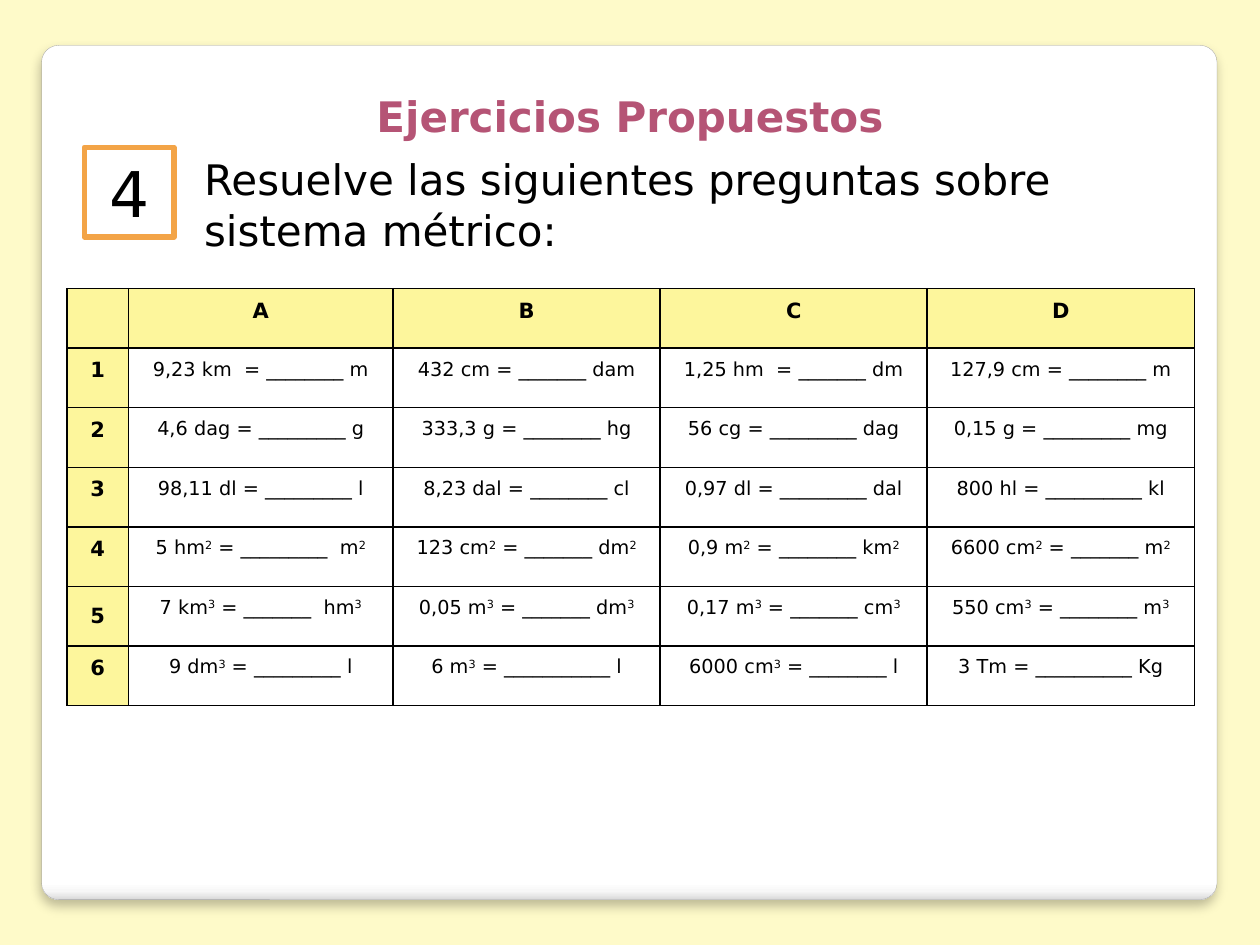
from dataclasses import dataclass

from lxml.etree import SubElement as Sub
from pptx import Presentation
from pptx.dml.color import RGBColor as Rgb
from pptx.enum.shapes import MSO_SHAPE as Shape
from pptx.enum.text import MSO_ANCHOR as Anchor, MSO_AUTO_SIZE as Fit, PP_ALIGN as Align
from pptx.oxml.ns import qn
from pptx.util import Inches, Pt


@dataclass(frozen=True)
class Theme:
    font: str = "DejaVu Sans"
    page: str = "FEFAC9"
    white: str = "FFFFFF"
    edge: str = "A4A4A4"
    title: str = "B55475"
    ink: str = "000000"
    badge: str = "F3A447"
    head: str = "FDF69C"
    big: int = 36
    lead: int = 24
    label: int = 12
    cell: int = 11


T = Theme()
STOPS = ((0, "FFFFFF"), (98, "FFFFFF"), (99, "F7F7F7"), (100, "DADADA"))

# A caret raises the digit that follows it
TASKS = (
    ("9,23 km  = ________ m", "432 cm = _______ dam",
     "1,25 hm  = _______ dm", "127,9 cm = ________ m"),
    ("4,6 dag = _________ g", "333,3 g = ________ hg",
     "56 cg = _________ dag", "0,15 g = _________ mg"),
    ("98,11 dl = _________ l", "8,23 dal = ________ cl",
     "0,97 dl = _________ dal", "800 hl = __________ kl"),
    ("5 hm^2 = _________  m^2", "123 cm^2 = _______ dm^2",
     "0,9 m^2 = ________ km^2", "6600 cm^2 = _______ m^2"),
    ("7 km^3 = _______  hm^3", "0,05 m^3 = _______ dm^3",
     "0,17 m^3 = _______ cm^3", "550 cm^3 = ________ m^3"),
    ("9 dm^3 = _________ l", "6 m^3 = ___________ l",
     "6000 cm^3 = ________ l", "3 Tm = __________ Kg"),
)


def write(frame, text, size=T.cell, color=T.ink, bold=False, align=Align.CENTER):
    """Fill a text frame with one paragraph, raising digits after a caret."""
    para = frame.paragraphs[0]
    para.alignment = align
    para.space_before = Pt(0)
    first, *rest = text.split("^")
    parts = [(first, False)]
    for part in rest:
        parts += [(part[0], True), (part[1:], False)]
    for part, raised in parts:
        if not part:
            continue
        run = para.add_run()
        run.text = part
        font = run.font
        font.name, font.size, font.bold = T.font, Pt(size), bold
        font.color.rgb = Rgb.from_string(color)
        if raised:
            run._r.get_or_add_rPr().set("baseline", "30000")


def place(shape, box):
    shape.left, shape.top, shape.width, shape.height = box


def hold(holder, box):
    """Move a placeholder and return its cleaned-up frame."""
    place(holder, box)
    frame = holder.text_frame
    frame.word_wrap, frame.auto_size = True, Fit.NONE
    frame.vertical_anchor = Anchor.TOP
    return frame


def panel(slide, kind, box, line, width):
    shape = slide.shapes.add_shape(kind, *box)
    shape.shadow.inherit = False
    shape.line.color.rgb = Rgb.from_string(line)
    shape.line.width = Pt(width)
    return shape


def card(slide, box):
    shape = panel(slide, Shape.ROUNDED_RECTANGLE, box, T.edge, 0.16)
    shape.adjustments[0] = 0.02
    shape.fill.gradient()
    shape.fill.gradient_angle = 270
    props = shape._element.spPr
    # Four gradient stops
    stops = props.find(".//" + qn("a:gsLst"))
    stops.clear()
    for pos, color in STOPS:
        stop = Sub(stops, qn("a:gs"), pos=str(pos * 1000))
        Sub(stop, qn("a:srgbClr"), val=color)
    # Soft shadow below
    cast = Sub(props.find(qn("a:effectLst")), qn("a:outerShdw"), blurRad=str(Pt(6)),
               dist=str(Pt(4)), dir="5400000", rotWithShape="0")
    Sub(Sub(cast, qn("a:srgbClr"), val=T.ink), qn("a:alpha"), val="25000")
    # Send behind the placeholders
    slide.shapes.title._element.addprevious(shape._element)


def heading(slide, box):
    frame = hold(slide.shapes.title, box)
    write(frame, "Ejercicios Propuestos", size=T.lead, color=T.title, bold=True)


def badge(slide, box):
    shape = panel(slide, Shape.RECTANGLE, box, T.badge, 3.35)
    shape.fill.solid()
    shape.fill.fore_color.rgb = Rgb.from_string(T.white)
    shape.text_frame.vertical_anchor = Anchor.MIDDLE
    write(shape.text_frame, "4", size=T.big)


def prompt(slide, box):
    frame = hold(slide.placeholders[1], box)
    props = frame.paragraphs[0]._p.get_or_add_pPr()
    props.set("marL", "0")
    props.set("indent", "0")
    Sub(props, qn("a:buNone"))
    write(frame, "Resuelve las siguientes preguntas sobre sistema métrico:",
          size=T.lead, align=Align.LEFT)


def border(cell):
    props = cell._tc.get_or_add_tcPr()
    for side in ("lnL", "lnR", "lnT", "lnB"):
        line = Sub(props, qn("a:" + side), w=str(Pt(1)))
        Sub(Sub(line, qn("a:solidFill")), qn("a:srgbClr"), val=T.ink)


def grid(slide, box):
    rows = [("", *"ABCD")] + [(str(n), *row) for n, row in enumerate(TASKS, 1)]
    table = slide.shapes.add_table(len(rows), len(rows[0]), *box).table
    table.first_row = table.horz_banding = False
    for col, width in zip(table.columns, (0.49, 2.1, 2.12, 2.12, 2.12)):
        col.width = Inches(width)
    for r, row in enumerate(rows):
        for c, text in enumerate(row):
            cell = table.cell(r, c)
            label = r == 0 or c == 0
            cell.margin_left = cell.margin_right = Inches(0.08)
            cell.margin_top, cell.margin_bottom = Inches(0.08), 0
            border(cell)
            if label:
                cell.fill.solid()
                cell.fill.fore_color.rgb = Rgb.from_string(T.head)
            else:
                cell.fill.background()
            if text:
                write(cell.text_frame, text, bold=label,
                      size=T.label if label else T.cell)
    # Label 5 sits mid-row
    five = table.cell(5, 0)
    five.margin_top, five.vertical_anchor = 0, Anchor.MIDDLE


def inch(*sizes):
    return tuple(Inches(size) for size in sizes)


def main():
    deck = Presentation()
    deck.slide_width, deck.slide_height = inch(10, 7.5)
    slide = deck.slides.add_slide(deck.slide_layouts[1])
    back = slide.background.fill
    back.solid()
    back.fore_color.rgb = Rgb.from_string(T.page)

    card(slide, inch(0.33, 0.36, 9.33, 6.78))
    heading(slide, inch(0.39, 0.67, 9.22, 0.5))
    badge(slide, inch(0.67, 1.17, 0.71, 0.71))
    prompt(slide, inch(1.52, 1.17, 7.95, 0.91))
    grid(slide, inch(0.53, 2.29, 8.95, 3.31))
    deck.save("out.pptx")


if __name__ == "__main__":
    main()
